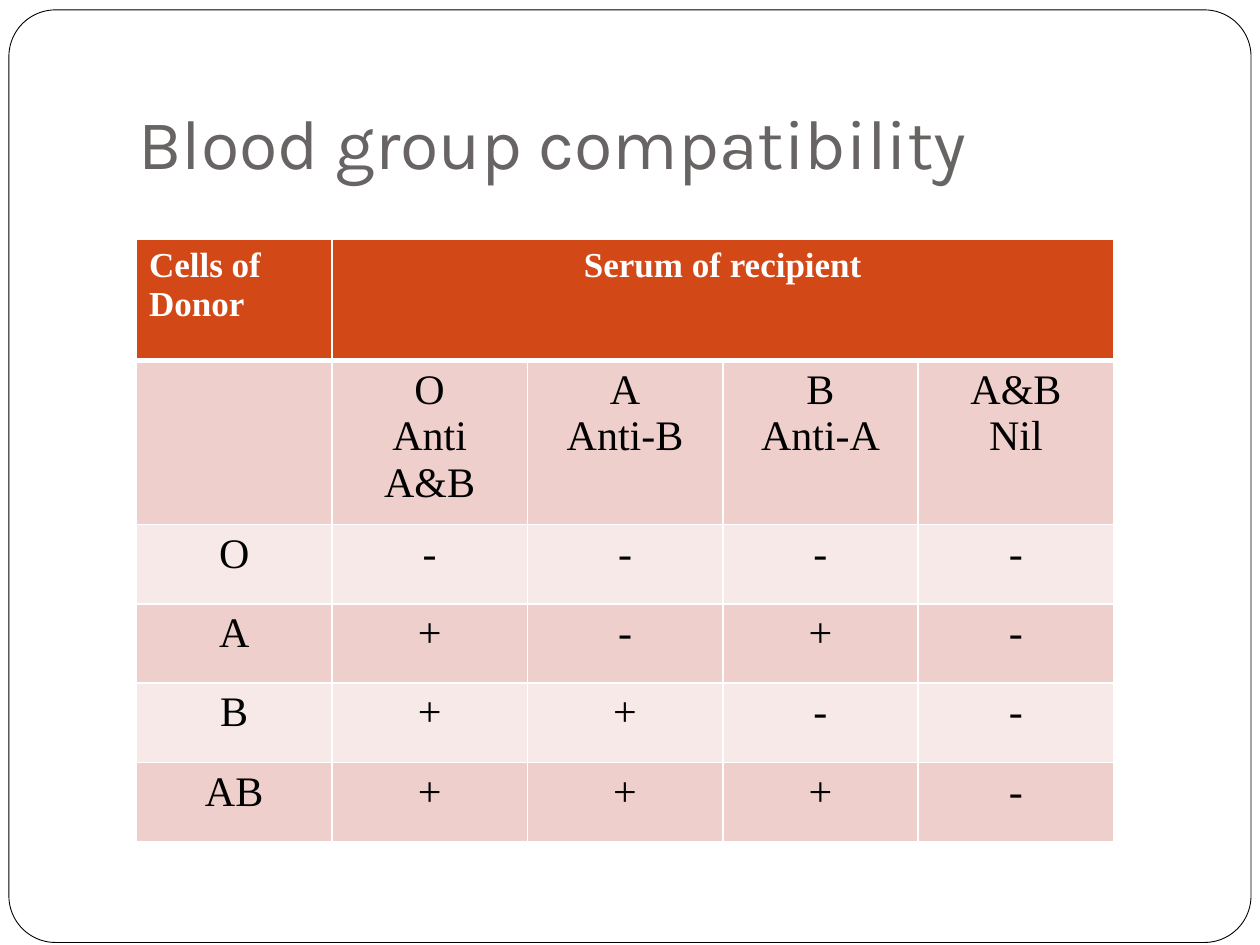
from lxml import etree
from pptx import Presentation
from pptx import util as u
from pptx.dml.color import RGBColor
from pptx.enum import shapes, text
from pptx.oxml.ns import qn

COLORS = {
    "white": "FFFFFF",
    "black": "000000",
    "title": "696464",
    "header": "D34817",
    "dark_band": "EFCFCC",
    "light_band": "F7E9E8",
}
ROWS = [
    ["Cells of Donor", "Serum of recipient", "", "", ""],
    ["", "O\nAnti A&B", "A\nAnti-B", "B\nAnti-A", "A&B\nNil"],
    ["O", "-", "-", "-", "-"],
    ["A", "+", "-", "+", "-"],
    ["B", "+", "+", "-", "-"],
    ["AB", "+", "+", "+", "-"],
]


def color(name):
    return RGBColor.from_string(COLORS[name])


def add_borders(cell, bottom_width):
    """Give the cell white borders, 1 pt except at the bottom."""
    properties = cell._tc.get_or_add_tcPr()
    for index, side in enumerate(["lnL", "lnR", "lnT", "lnB"]):
        width = bottom_width if side == "lnB" else 1
        line = etree.Element(qn("a:" + side), w=str(u.Pt(width)))
        fill = etree.SubElement(line, qn("a:solidFill"))
        etree.SubElement(fill, qn("a:srgbClr"), val=COLORS["white"])
        properties.insert(index, line)


presentation = Presentation()
presentation.slide_width = u.Cm(25.4)
presentation.slide_height = u.Cm(19.05)
slide = presentation.slides.add_slide(presentation.slide_layouts[6])

# Rounded frame around the slide
frame = slide.shapes.add_shape(
    shapes.MSO_SHAPE.ROUNDED_RECTANGLE, u.Cm(0.18), u.Cm(0.2), u.Cm(25.04), u.Cm(18.8)
)
frame.adjustments[0] = 0.05
frame.shadow.inherit = False
frame.fill.solid()
frame.fill.fore_color.rgb = color("white")
frame.line.color.rgb = color("black")
frame.line.width = u.Pt(0.5)

# Title
title = slide.shapes.add_textbox(u.Cm(2.54), u.Cm(0.76), u.Cm(21.59), u.Cm(3.18))
title_text = title.text_frame
title_text.word_wrap = True
title_text.vertical_anchor = text.MSO_ANCHOR.BOTTOM
title_text.margin_bottom = u.Cm(0.25)
title_text.text = "Blood group compatibility"
title_font = title_text.paragraphs[0].font
title_font.name = "Karla"
title_font.size = u.Pt(40)
title_font.color.rgb = color("title")

# Compatibility table
table = slide.shapes.add_table(
    len(ROWS), len(ROWS[0]), u.Cm(2.75), u.Cm(4.83), u.Cm(19.7), u.Cm(10.44)
).table
for column in table.columns:
    column.width = u.Cm(3.94)
for row_index, values in enumerate(ROWS):
    is_header = row_index == 0
    table.rows[row_index].height = u.Cm(2.44 if is_header else 1.6)
    band = "header" if is_header else "dark_band" if row_index % 2 else "light_band"
    for column_index, value in enumerate(values):
        cell = table.cell(row_index, column_index)
        cell.text = value
        cell.fill.solid()
        cell.fill.fore_color.rgb = color(band)
        add_borders(cell, 3 if is_header else 1)
        for paragraph in cell.text_frame.paragraphs:
            if not (is_header and column_index == 0):
                paragraph.alignment = text.PP_ALIGN.CENTER
            paragraph.font.name = "Times New Roman"
            paragraph.font.size = u.Pt(20 if is_header else 24)
            paragraph.font.bold = is_header
            paragraph.font.color.rgb = color("white" if is_header else "black")
table.cell(0, 1).merge(table.cell(0, 4))

presentation.save("out.pptx")
